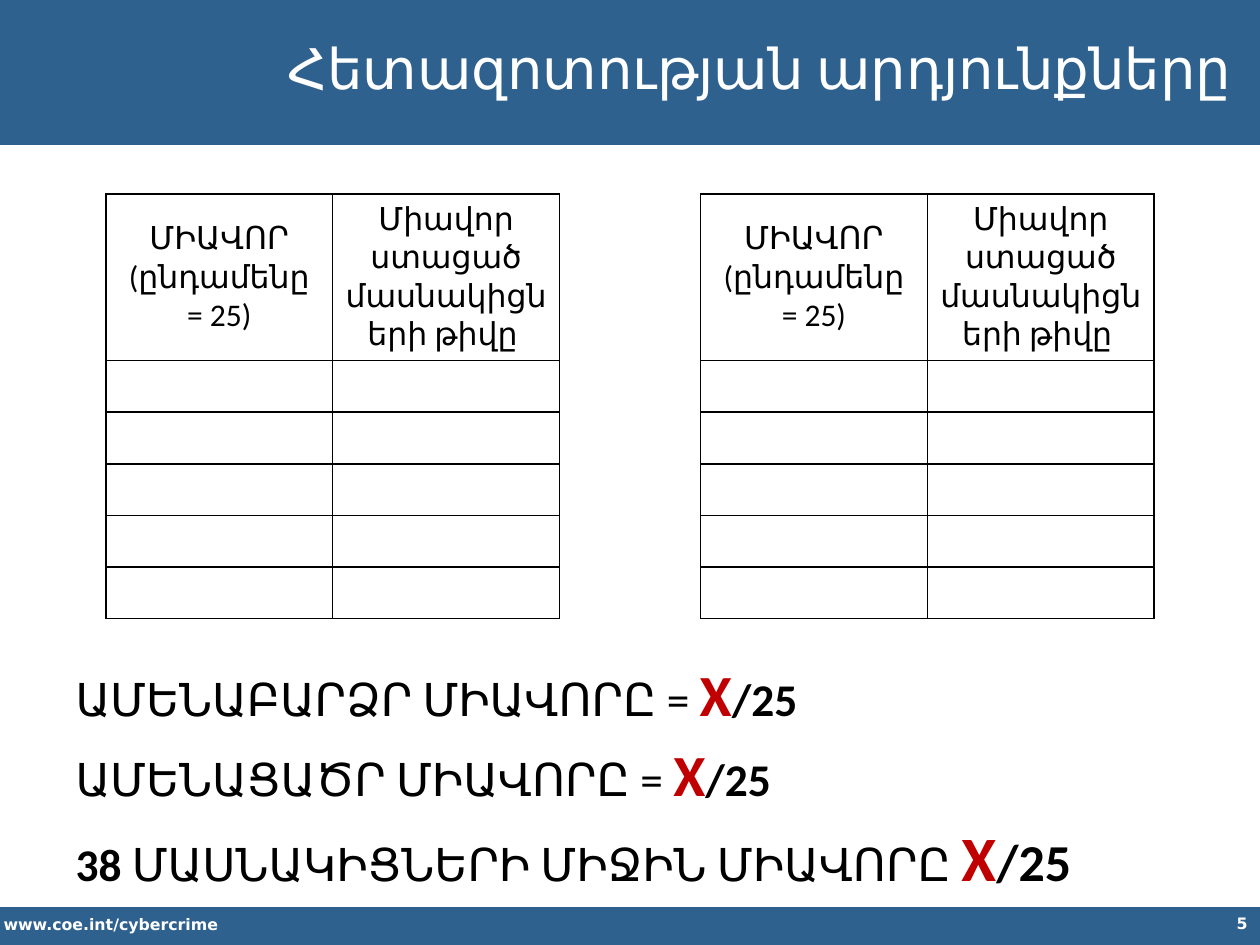
from lxml import etree
from pptx import Presentation
from pptx.dml.color import RGBColor
from pptx.enum import shapes, text
from pptx.oxml.ns import qn
from pptx.util import Inches, Pt

BLUE = RGBColor(0x2F, 0x61, 0x8F)
WHITE = RGBColor(0xFF, 0xFF, 0xFF)
BLACK = RGBColor(0, 0, 0)
RED = RGBColor(0xC0, 0, 0)


def add_run(p, words, color, **fmt):
    r = p.add_run()
    r.text = words
    r.font.color.rgb = color
    for key, value in fmt.items():
        setattr(r.font, key, value)


def place(sp, left, top, width, height):
    sp.left, sp.top, sp.width, sp.height = map(Inches, (left, top, width, height))


prs = Presentation()
prs.slide_width, prs.slide_height = Inches(10), Inches(7.5)
s = prs.slides.add_slide(prs.slide_layouts[1])
title, body = s.shapes.title, s.placeholders[1]

for top, height in ((-0.03, 1.18), (7.2, 0.32)):
    sp = s.shapes.add_shape(shapes.MSO_SHAPE.RECTANGLE, 0, Inches(top), Inches(10), Inches(height))
    sp.shadow.inherit = False
    sp.fill.solid()
    sp.fill.fore_color.rgb = BLUE
    sp.line.fill.background()

for words, box, align in (
    ("www.coe.int/cybercrime", (-0.07, 7.21, 3.52, 0.25), text.PP_ALIGN.LEFT),
    ("5", (7.75, 7.2, 2.25, 0.31), text.PP_ALIGN.RIGHT),
):
    sp = s.shapes.add_textbox(*map(Inches, box))
    sp.text_frame.word_wrap = True
    p = sp.text_frame.paragraphs[0]
    p.alignment = align
    add_run(p, words, WHITE, size=Pt(9), bold=True, name="DejaVu Sans")

for sp in (title, body):
    s.shapes._spTree.append(sp._element)
    sp.text_frame.auto_size = text.MSO_AUTO_SIZE.NONE

place(title, 1.53, 0.21, 8.35, 0.64)
title.text_frame.vertical_anchor = text.MSO_ANCHOR.MIDDLE
p = title.text_frame.paragraphs[0]
p.alignment = text.PP_ALIGN.RIGHT
add_run(p, "Հետազոտության արդյունքները", WHITE, size=Pt(32), name="Calibri")

place(body, 0.5, 5.17, 9, 1.92)
tf = body.text_frame
scores = (
    ("", "ԱՄԵՆԱԲԱՐՁՐ ՄԻԱՎՈՐԸ = ", 33.3, 25.9),
    ("", "ԱՄԵՆԱՑԱԾՐ ՄԻԱՎՈՐԸ = ", 33.3, 25.9),
    ("38 ", "ՄԱՍՆԱԿԻՑՆԵՐԻ ՄԻՋԻՆ ՄԻԱՎՈՐԸ ", 36.1, 29.6),
)
for i, (count, label, x_size, total_size) in enumerate(scores):
    p = tf.paragraphs[0] if i == 0 else tf.add_paragraph()
    pPr = p._p.get_or_add_pPr()
    pPr.set("marL", str(Inches(0.56)))
    pPr.set("indent", str(-Inches(0.56)))
    etree.SubElement(pPr, qn("a:buNone"))
    p.space_before = Pt(6 if i else 0)
    for words, size, color, bold in (
        (count, 25.9, BLACK, True),
        (label, 25.9, BLACK, False),
        ("X", x_size, RED, True),
        ("/25", total_size, BLACK, True),
    ):
        if words:
            add_run(p, words, color, size=Pt(size), bold=bold, name="Calibri")

headers = (("ՄԻԱՎՈՐ", "(ընդամենը = 25)"), ("Միավոր ստացած մասնակիցների թիվը ",))
for left in (0.84, 5.56):
    table = s.shapes.add_table(6, 2, Inches(left), Inches(1.54), Inches(3.59), Inches(3.34)).table
    table.first_row = table.horz_banding = False
    for col in table.columns:
        col.width = Inches(1.8)
    for i, row in enumerate(table.rows):
        row.height = Inches(0.41 if i else 1.3)
        for cell in row.cells:
            cell.vertical_anchor = text.MSO_ANCHOR.MIDDLE
            cell.fill.background()
            tcPr = cell._tc.get_or_add_tcPr()
            for k, side in enumerate(("a:lnL", "a:lnR", "a:lnT", "a:lnB")):
                ln = etree.Element(qn(side), w=str(Pt(1)))
                fill = etree.SubElement(ln, qn("a:solidFill"))
                etree.SubElement(fill, qn("a:srgbClr"), val=str(BLACK))
                tcPr.insert(k, ln)
    for j, lines in enumerate(headers):
        tf = table.cell(0, j).text_frame
        for k, words in enumerate(lines):
            p = tf.paragraphs[0] if k == 0 else tf.add_paragraph()
            p.alignment = text.PP_ALIGN.CENTER
            add_run(p, words, BLACK, size=Pt(18), name="Calibri")

prs.save("out.pptx")
